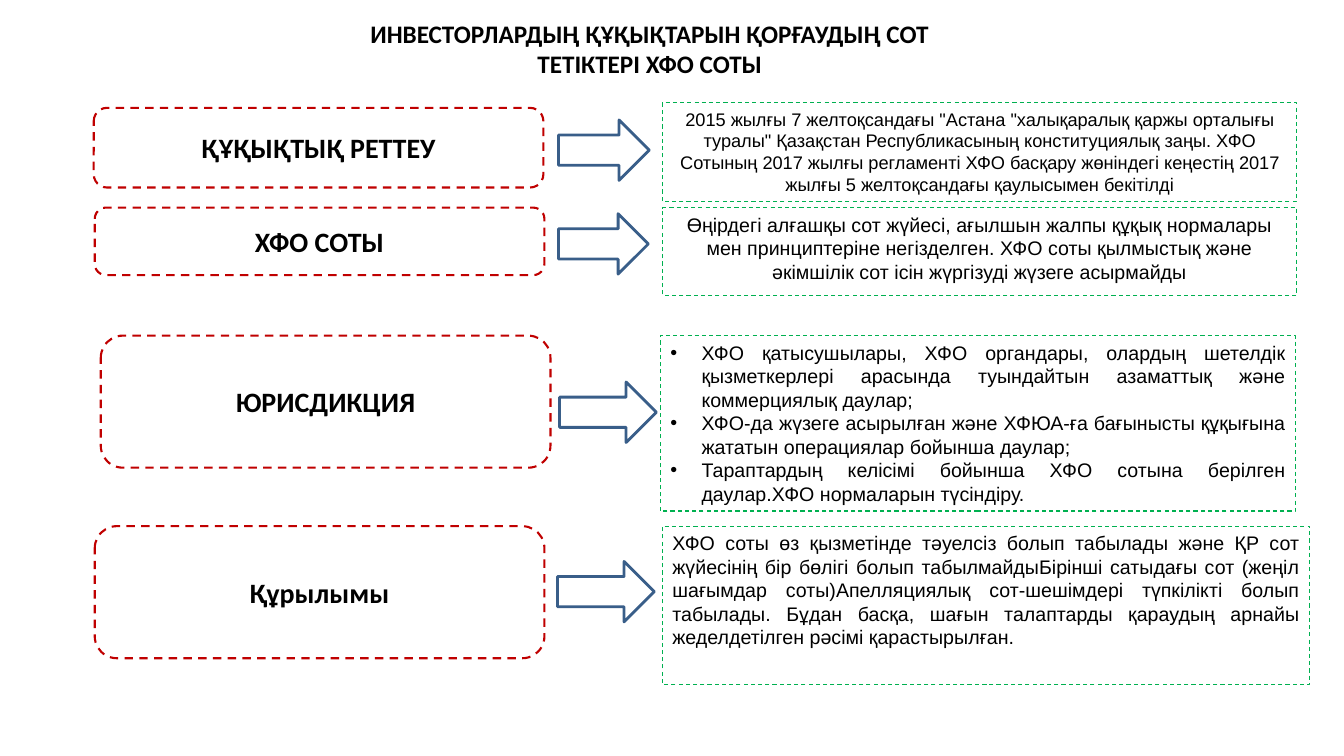
from dataclasses import dataclass

from lxml import etree
from pptx import Presentation
from pptx.dml.color import RGBColor
from pptx.enum import dml, shapes, text
from pptx.oxml import ns
from pptx.util import Inches, Pt

BLACK, RED, GREEN, BLUE = "000000", "C00000", "00B050", "395E89"
CENTER, JUSTIFY = text.PP_ALIGN.CENTER, text.PP_ALIGN.JUSTIFY
LABEL_WIDTH, ARROW_HEIGHT, BULLET_INDENT = 4.46, 0.6, 0.31


@dataclass(frozen=True)
class Box:
    left: float
    top: float
    width: float
    height: float


@dataclass(frozen=True)
class Row:
    label: str
    label_box: Box
    arrow_box: Box
    details: tuple[str, ...]
    detail_box: Box
    size: int = 14
    alignment: text.PP_ALIGN = JUSTIFY
    bulleted: bool = False


ROWS = (
    Row(
        "ҚҰҚЫҚТЫҚ РЕТТЕУ",
        Box(0.93, 1.07, LABEL_WIDTH, 0.79),
        Box(5.54, 1.19, 0.9, ARROW_HEIGHT),
        ('2015 жылғы 7 желтоқсандағы "Астана "халықаралық қаржы орталығы туралы" '
         "Қазақстан Республикасының конституциялық заңы. ХФО Сотының 2017 жылғы "
         "регламенті ХФО басқару жөніндегі кеңестің 2017 жылғы 5 желтоқсандағы "
         "қаулысымен бекітілді",),
        Box(6.57, 1.02, 6.29, 0.98),
        size=13,
        alignment=CENTER,
    ),
    Row(
        "ХФО СОТЫ",
        Box(0.94, 2.06, LABEL_WIDTH, 0.67),
        Box(5.54, 2.12, 0.89, ARROW_HEIGHT),
        ("Өңірдегі алғашқы сот жүйесі, ағылшын жалпы құқық нормалары мен "
         "принциптеріне негізделген. ХФО соты қылмыстық және әкімшілік сот ісін "
         "жүргізуді жүзеге асырмайды",),
        Box(6.57, 2.06, 6.29, 0.87),
        alignment=CENTER,
    ),
    Row(
        "ЮРИСДИКЦИЯ",
        Box(1, 3.33, LABEL_WIDTH, 1.31),
        Box(5.55, 3.79, 0.96, ARROW_HEIGHT),
        ("ХФО қатысушылары, ХФО органдары, олардың шетелдік қызметкерлері арасында "
         "туындайтын азаматтық және коммерциялық даулар;",
         "ХФО-да жүзеге асырылған және ХФЮА-ға бағынысты құқығына жататын "
         "операциялар бойынша даулар;",
         "Тараптардың келісімі бойынша ХФО сотына берілген даулар.ХФО нормаларын "
         "түсіндіру."),
        Box(6.55, 3.33, 6.3, 1.74),
        bulleted=True,
    ),
    Row(
        "Құрылымы",
        Box(0.94, 5.22, LABEL_WIDTH, 1.31),
        Box(5.53, 5.57, 0.96, ARROW_HEIGHT),
        ("ХФО соты өз қызметінде тәуелсіз болып табылады және ҚР сот жүйесінің бір "
         "бөлігі болып табылмайдыБірінші сатыдағы сот (жеңіл шағымдар "
         "соты)Апелляциялық сот-шешімдері түпкілікті болып табылады. Бұдан басқа, "
         "шағын талаптарды қараудың арнайы жеделдетілген рәсімі қарастырылған.",),
        Box(6.57, 5.22, 6.42, 1.57),
    ),
)


def color(value: str) -> RGBColor:
    return RGBColor.from_string(value)


def place(box: Box) -> tuple:
    return Inches(box.left), Inches(box.top), Inches(box.width), Inches(box.height)


def add_outline(slide, kind, box: Box, line_color: str, line_width: float,
                dashed: bool = True):
    shape = slide.shapes.add_shape(kind, *place(box))
    shape.shadow.inherit = False
    shape.fill.background()
    shape.line.color.rgb = color(line_color)
    shape.line.width = Pt(line_width)
    if dashed:
        shape.line.dash_style = dml.MSO_LINE.DASH
    return shape


def add_bullet(paragraph) -> None:
    properties = paragraph._p.get_or_add_pPr()
    properties.set("marL", str(Inches(BULLET_INDENT)))
    properties.set("indent", str(-Inches(BULLET_INDENT)))
    etree.SubElement(properties, ns.qn("a:buFont")).set("typeface", "Arial")
    etree.SubElement(properties, ns.qn("a:buChar")).set("char", "•")


def write(shape, lines: tuple[str, ...], font_name: str, size: float,
          alignment=CENTER, bold: bool = False, bulleted: bool = False,
          anchor=text.MSO_ANCHOR.TOP) -> None:
    frame = shape.text_frame
    frame.word_wrap = True
    frame.vertical_anchor = anchor
    for index, line in enumerate(lines):
        paragraph = frame.add_paragraph() if index else frame.paragraphs[0]
        paragraph.alignment = alignment
        if bulleted:
            add_bullet(paragraph)
        run = paragraph.add_run()
        run.text = line
        run.font.name = font_name
        run.font.size = Pt(size)
        run.font.bold = bold
        run.font.color.rgb = color(BLACK)


def add_row(slide, row: Row) -> None:
    label = add_outline(slide, shapes.MSO_SHAPE.ROUNDED_RECTANGLE, row.label_box, RED, 1.5)
    write(label, (row.label,), "Calibri", 20, bold=True, anchor=text.MSO_ANCHOR.MIDDLE)
    add_outline(slide, shapes.MSO_SHAPE.RIGHT_ARROW, row.arrow_box, BLUE, 2, dashed=False)
    detail = add_outline(slide, shapes.MSO_SHAPE.RECTANGLE, row.detail_box, GREEN, 0.75)
    write(detail, row.details, "Arial", row.size, row.alignment, bulleted=row.bulleted)


def main() -> None:
    presentation = Presentation()
    presentation.slide_width = Inches(13.33)
    presentation.slide_height = Inches(7.5)
    slide = presentation.slides.add_slide(presentation.slide_layouts[6])
    for row in ROWS:
        add_row(slide, row)
    title = slide.shapes.add_textbox(*place(Box(3.11, 0.13, 6.67, 0.71)))
    write(title, ("ИНВЕСТОРЛАРДЫҢ ҚҰҚЫҚТАРЫН ҚОРҒАУДЫҢ СОТ ТЕТІКТЕРІ ХФО СОТЫ",),
          "Calibri", 18, bold=True)
    title.text_frame.auto_size = text.MSO_AUTO_SIZE.SHAPE_TO_FIT_TEXT
    presentation.save("out.pptx")


if __name__ == "__main__":
    main()
